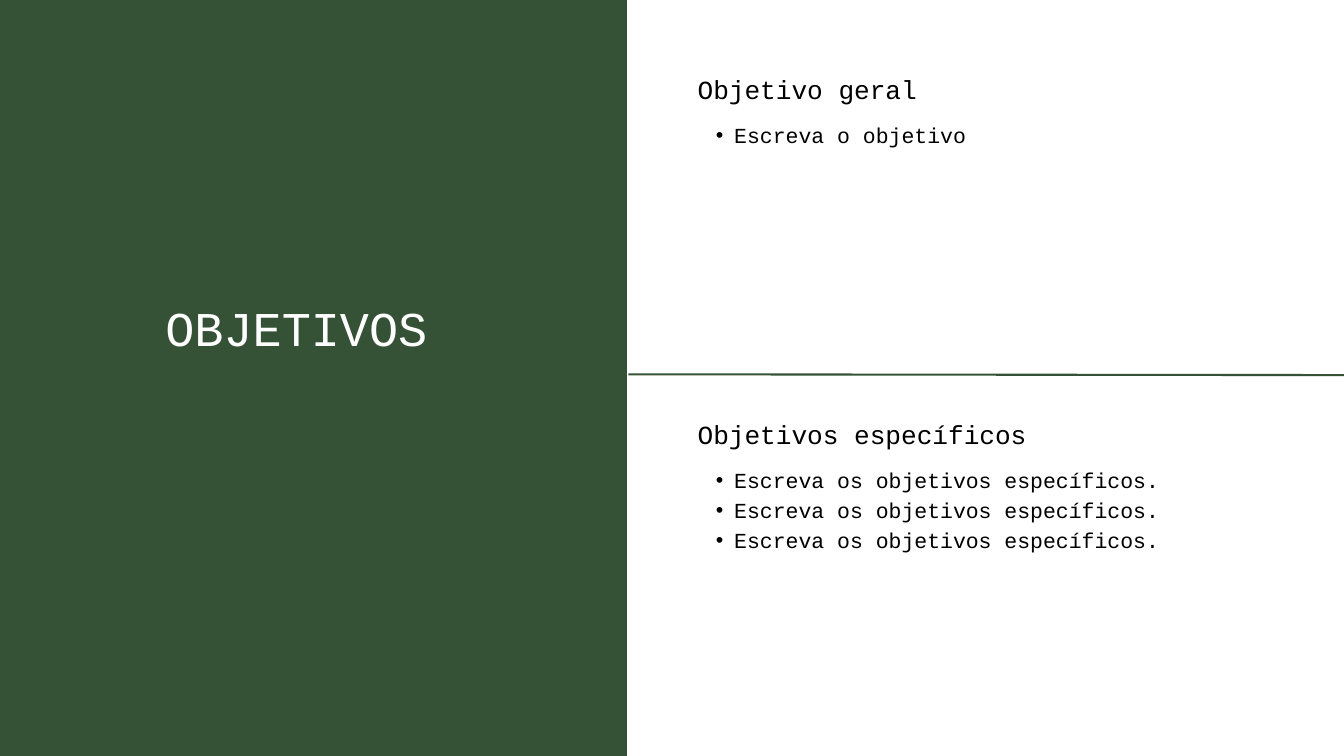
from lxml.etree import SubElement
from pptx import Presentation
from pptx.dml.color import RGBColor
from pptx.enum.shapes import MSO_CONNECTOR, MSO_SHAPE
from pptx.enum.text import MSO_ANCHOR, MSO_AUTO_SIZE, PP_ALIGN
from pptx.oxml.ns import qn
from pptx.util import Cm, Pt

COLORS = {"green": "365236", "white": "FFFFFF", "black": "000000"}
FONT = "Courier New"
SLIDE_WIDTH, SLIDE_HEIGHT = 50.8, 28.58
PANEL_RIGHT = 23.7
TEXT_LEFT, TEXT_WIDTH = 26.37, 17.5
SECTIONS = [
    (2.77, 1.17, 2.11, "Objetivo geral", ["Escreva o objetivo"]),
    (15.82, 1.27, 3.38, "Objetivos específicos", ["Escreva os objetivos específicos."] * 3),
]


class SlideBuilder:
    """Holds the style and the current slide and draws each kind of element."""

    def __init__(self, page):
        self.page = page

    def color(self, name):
        return RGBColor.from_string(COLORS[name])

    def format_text(self, box, lines, size, spacing, color, bulleted=False):
        frame = box.text_frame
        frame.text = "\n".join(lines)
        frame.word_wrap = True
        frame.auto_size = MSO_AUTO_SIZE.SHAPE_TO_FIT_TEXT
        frame.vertical_anchor = MSO_ANCHOR.TOP
        frame.margin_left = frame.margin_right = 0
        frame.margin_top = frame.margin_bottom = 0
        for para in frame.paragraphs:
            para.alignment = PP_ALIGN.LEFT
            para.line_spacing = Pt(spacing)
            para.space_before = para.space_after = Pt(0)
            if bulleted:
                self.add_bullet(para)
            for span in para.runs:
                span.font.name = FONT
                span.font.size = Pt(size)
                span.font.color.rgb = self.color(color)

    def add_bullet(self, para):
        para.level = 1
        properties = para._p.get_or_add_pPr()
        properties.set("marL", str(Cm(1.38)))
        properties.set("indent", str(-Cm(0.69)))
        SubElement(properties, qn("a:buFont")).set("typeface", "Arial")
        SubElement(properties, qn("a:buChar")).set("char", "•")

    def panel(self, left, top, width, height):
        box = self.page.shapes.add_shape(
            MSO_SHAPE.RECTANGLE, Cm(left), Cm(top), Cm(width), Cm(height))
        box.shadow.inherit = False
        box.fill.solid()
        box.fill.fore_color.rgb = self.color("green")
        box.line.fill.background()
        self.page.shapes.element.insert(2, box.element)

    def title(self, text, left, top, width, height):
        box = self.page.shapes.title
        box.left, box.top, box.width, box.height = Cm(left), Cm(top), Cm(width), Cm(height)
        self.format_text(box, [text], 52, 62.4, "white")

    def section(self, top, heading_height, list_height, heading, items):
        shapes = self.page.shapes.add_group_shape().shapes
        box = shapes.add_textbox(Cm(TEXT_LEFT), Cm(top), Cm(TEXT_WIDTH), Cm(heading_height))
        self.format_text(box, [heading], 28, 33.6, "black")
        box = shapes.add_textbox(Cm(TEXT_LEFT), Cm(top + 1.68), Cm(TEXT_WIDTH), Cm(list_height))
        self.format_text(box, items, 23, 32.2, "black", bulleted=True)

    def line(self, start_x, start_y, end_x, end_y):
        connector = self.page.shapes.add_connector(
            MSO_CONNECTOR.STRAIGHT, Cm(start_x), Cm(start_y), Cm(end_x), Cm(end_y))
        connector.line.color.rgb = self.color("green")
        connector.line.width = Pt(2.25)
        SubElement(connector.element.spPr, qn("a:effectLst"))


def main():
    deck = Presentation()
    deck.slide_width, deck.slide_height = Cm(SLIDE_WIDTH), Cm(SLIDE_HEIGHT)
    builder = SlideBuilder(deck.slides.add_slide(deck.slide_layouts[5]))
    builder.panel(-0.05, 0, PANEL_RIGHT + 0.05, SLIDE_HEIGHT)
    builder.title("OBJETIVOS", 6.25, 11.28, 18.77, 2.44)
    for section in SECTIONS:
        builder.section(*section)
    builder.line(PANEL_RIGHT + 0.05, 14.15, SLIDE_WIDTH, 14.18)
    deck.save("out.pptx")


if __name__ == "__main__":
    main()
